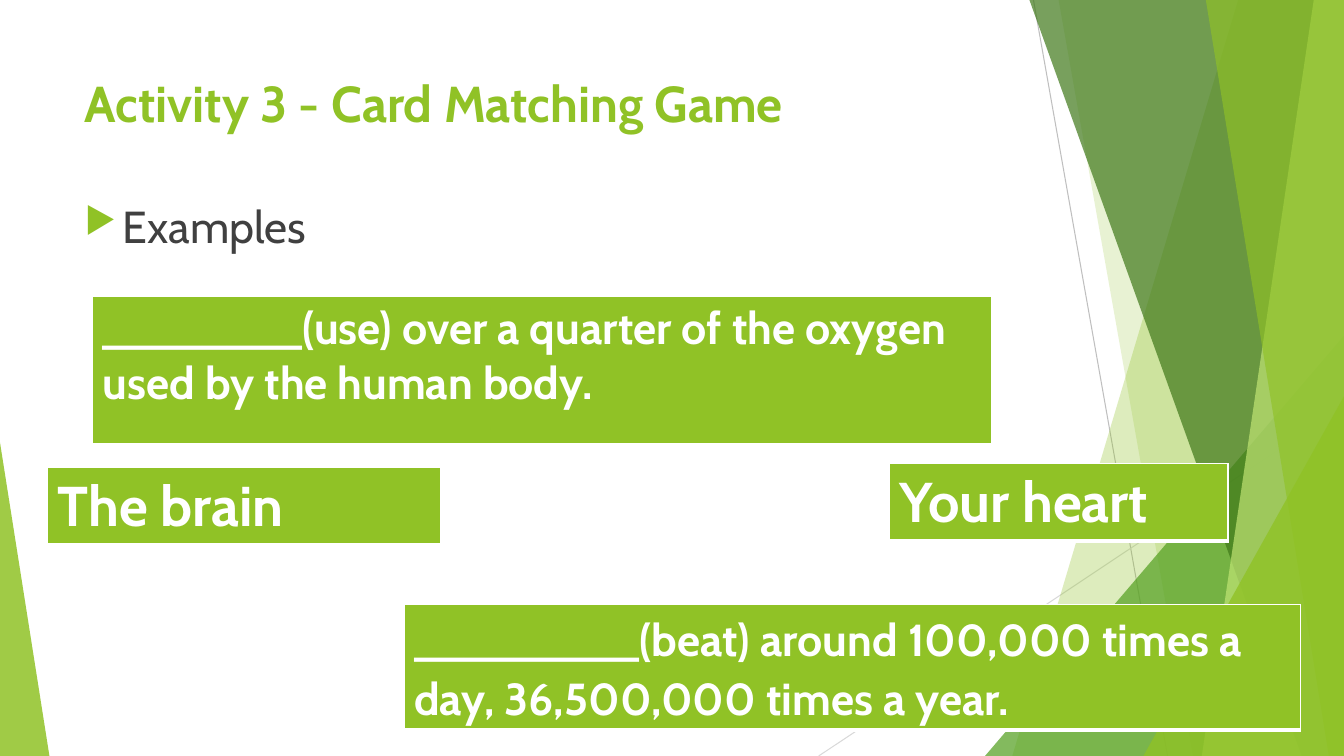
from lxml import etree
from pptx import Presentation
from pptx.dml.color import RGBColor
from pptx.enum.shapes import MSO_CONNECTOR, MSO_SHAPE
from pptx.enum.text import MSO_ANCHOR, PP_ALIGN
from pptx.oxml.ns import qn
from pptx.util import Inches, Pt

LINE = MSO_CONNECTOR.STRAIGHT
TRIANGLE = MSO_SHAPE.ISOSCELES_TRIANGLE
TOP, LEFT = MSO_ANCHOR.TOP, PP_ALIGN.LEFT
FONT = "Cabin"
WIDE, HIGH = 13.33, 7.5
HEX = {"lime": "90C226", "leaf": "54A021", "forest": "3F7819", "pale": "C0E474",
       "white": "FFFFFF", "text": "404040", "gray": "BFBFBF", "silver": "D9D9D9"}

# Content
TITLE = "Activity 3 - Card Matching Game"
POINT = "Examples"
# text, size, line spacing, space after, (left, top, width, height)
CARDS = [
    ("The brain", 40, 1, 0, (0.47, 4.64, 3.9, 0.77)),
    ("_________(beat) around 100,000 times a day, 36,500,000 times a year.",
     32, 1.07, 8, (4.01, 6, 8.89, 1.24)),
    ("________(use) over a quarter of the oxygen used by the human body.",
     32, 1, 0, (0.92, 2.94, 8.91, 1.47)),
    ("Your heart", 40, 1, 0, (8.82, 4.6, 3.36, 0.77)),
]
EDGES = [("lnL", 1), ("lnR", 1), ("lnT", 1), ("lnB", 3)]

# Backdrop, from back to front
RAYS = [((10.25, 0), (11.58, HIGH), "gray"), ((WIDE, 4.03), (8.12, HIGH), "silver")]
# band: top left x, bottom left x; wedge: box and apex place
SHARDS = [
    ("band", (12.28, 10.04), "lime", 30),
    ("band", (10.5, 11.83), "lime", 20),
    ("wedge", ((9.77, 3.33, 3.56, 4.17), 1), "leaf", 72),
    ("band", (10.21, 12.91), "forest", 70),
    ("band", (13.03, 11.92), "pale", 70),
    ("band", (11.96, 13.18), "lime", 65),
    ("wedge", ((11.34, 3.93, 1.99, 3.57), 1), "lime", 80),
    ("wedge", ((0, 4.39, 0.49, 3.11), 0), "lime", 85),
]


def color(name):
    return RGBColor.from_string(HEX[name])


def inches(nums):
    return [Inches(n) for n in nums]


def style(par, size, name, bold=False):
    par.alignment = LEFT
    for run in par.runs:
        run.font.name = FONT
        run.font.size = Pt(size)
        run.font.bold = bold
        run.font.color.rgb = color(name)


def add_ray(shapes, start, end, name):
    ray = shapes.add_connector(LINE, *inches(start + end))
    ray.line.color.rgb = color(name)
    ray.line.width = Pt(0.75)
    etree.SubElement(ray._element.spPr, qn("a:effectLst"))


def add_shard(shapes, kind, form, name, alpha):
    if kind == "band":
        top, base = form
        pen = shapes.build_freeform(Inches(top), 0)
        pen.add_line_segments([inches(p) for p in
                               [(WIDE, 0), (WIDE, HIGH), (base, HIGH)]])
        shard = pen.convert_to_shape()
    else:
        box, apex = form
        shard = shapes.add_shape(TRIANGLE, *inches(box))
        shard.adjustments[0] = apex
    shard.shadow.inherit = False
    shard.line.fill.background()
    shard.fill.solid()
    shard.fill.fore_color.rgb = color(name)
    tint = shard._element.spPr.find(".//" + qn("a:srgbClr"))
    etree.SubElement(tint, qn("a:alpha"), val=str(alpha * 1000))


def add_bullet(par):
    props = par._p.get_or_add_pPr()
    props.set("marL", str(Inches(0.38)))
    props.set("indent", str(Inches(-0.38)))
    tint = etree.SubElement(props, qn("a:buClr"))
    etree.SubElement(tint, qn("a:srgbClr"), val=HEX["lime"])
    etree.SubElement(props, qn("a:buSzPct"), val="80000")
    etree.SubElement(props, qn("a:buChar"), char="▶")


def add_card(shapes, text, size, space, after, box):
    table = shapes.add_table(1, 1, *inches(box)).table
    table.first_row = table.horz_banding = False
    cell = table.cell(0, 0)
    cell.vertical_anchor = TOP
    cell.margin_bottom = 0
    cell.text_frame.text = text
    par = cell.text_frame.paragraphs[0]
    par.line_spacing = space
    par.space_after = Pt(after)
    style(par, size, "white", True)
    # Borders come before the fill in the cell properties
    props = cell._tc.get_or_add_tcPr()
    for tag, width in EDGES:
        edge = etree.SubElement(props, qn("a:" + tag), w=str(Pt(width)))
        paint = etree.SubElement(edge, qn("a:solidFill"))
        etree.SubElement(paint, qn("a:srgbClr"), val=HEX["white"])
    cell.fill.solid()
    cell.fill.fore_color.rgb = color("lime")


def main():
    deck = Presentation()
    deck.slide_width, deck.slide_height = inches((WIDE, HIGH))
    slide = deck.slides.add_slide(deck.slide_layouts[5])
    shapes = slide.shapes

    # Backdrop
    for ray in RAYS:
        add_ray(shapes, *ray)
    for shard in SHARDS:
        add_shard(shapes, *shard)

    # Title
    title = shapes.title
    title.left, title.top, title.width, title.height = inches((0.74, 0.67, 9.4, 1.44))
    title.text_frame.text = TITLE
    title.text_frame.vertical_anchor = TOP
    style(title.text_frame.paragraphs[0], 36, "lime", True)

    # Bullet point
    frame = shapes.add_textbox(*inches((0.74, 1.92, 9.4, 4.69))).text_frame
    frame.word_wrap = True
    frame.text = POINT
    par = frame.paragraphs[0]
    par.space_before = Pt(10)
    style(par, 32, "text")
    add_bullet(par)

    # Cards
    for card in CARDS:
        add_card(shapes, *card)

    deck.save("out.pptx")


if __name__ == "__main__":
    main()
